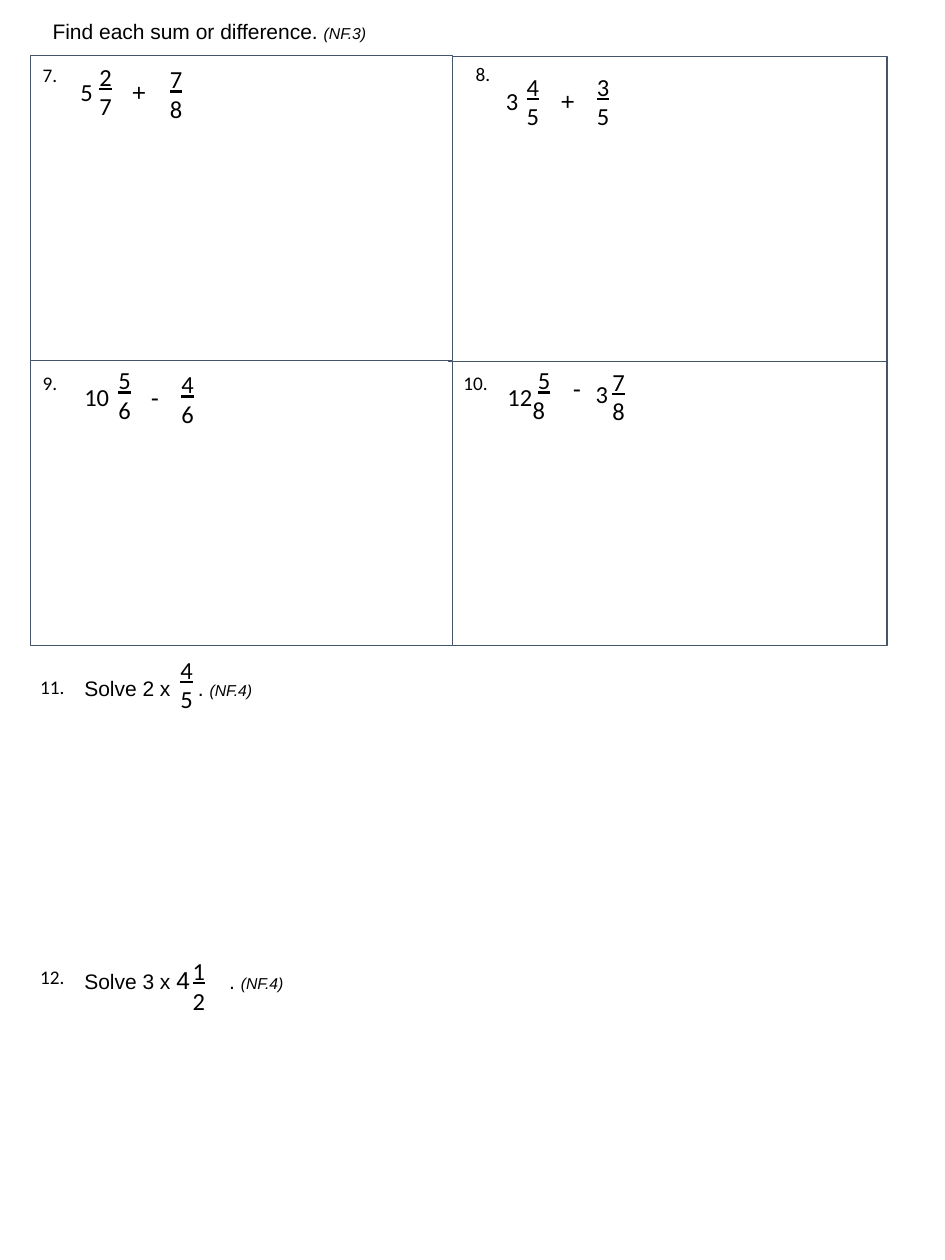
from pptx import Presentation
from pptx.dml.color import RGBColor
from pptx.enum.shapes import MSO_SHAPE as Shape
from pptx.enum.text import PP_ALIGN as Align
from pptx.oxml.ns import qn
from pptx.util import Cm, Pt
from lxml.etree import SubElement

BLACK, WHITE, BORDER = "000000", "FFFFFF", "44546A"
TEXT_FONT, NUMBER_FONT = "Arial", "Calibri"

# Grid cells: left, top, width, height in cm
CELLS = {
    "7.": (0.61, 1.12, 8.51, 6.15),
    "8.": (9.04, 1.14, 8.84, 6.15),
    "9.": (0.61, 6.86, 8.51, 6.15),
    "10.": (9.04, 6.86, 8.84, 6.15),
}

# Parts of each problem, with offsets in cm from the corner of its cell
PROBLEMS = {
    "7.": {"number": (0, 0.03), "wholes": [("5", 0.76, 0.3)],
           "operator": ("+", 1.8, 0.3, 1.6),
           "fractions": [("2", "7", 0.76, 0), ("7", "8", 2.18, 0.05)]},
    "8.": {"number": (0.3, 0), "wholes": [("3", 0.91, 0.46)],
           "operator": ("+", 2.01, 0.46, 1.14),
           "fractions": [("4", "5", 0.94, 0.18), ("3", "5", 2.36, 0.18)]},
    "9.": {"number": (0, 0.51), "wholes": [("10", 0.84, 0.71)],
           "operator": ("-", 2.18, 0.71, 0.86),
           "fractions": [("5", "6", 1.14, 0.38), ("4", "6", 2.41, 0.46)]},
    "10.": {"number": (0.05, 0.51),
            "wholes": [("12", 0.94, 0.71), ("3", 2.72, 0.66)],
            "operator": ("-", 2.26, 0.53, 0.89),
            "fractions": [("5", "8", 1.17, 0.38, 0.28), ("7", "8", 2.67, 0.41)]},
}


def color(hex_string):
    return RGBColor.from_string(hex_string)


def add_run(paragraph, text, size, font=TEXT_FONT, italic=False, underline=False):
    run = paragraph.add_run()
    run.text = text
    run.font.size = Pt(size)
    run.font.name = font
    run.font.italic = italic
    run.font.underline = underline
    run.font.color.rgb = color(BLACK)


def add_text(slide, box, runs):
    """Place a text box and return its first paragraph."""
    frame = slide.shapes.add_textbox(*map(Cm, box)).text_frame
    frame.word_wrap = True
    for run in runs:
        add_run(frame.paragraphs[0], *run)
    return frame.paragraphs[0]


def add_fraction(slide, left, top, numerator, denominator, indent=None):
    """Stack two numbers; an indent sets the lower one off centre."""
    frame = slide.shapes.add_textbox(Cm(left), Cm(top), Cm(1.52), Cm(1.45)).text_frame
    frame.word_wrap = True
    upper, lower = frame.paragraphs[0], frame.add_paragraph()
    upper.alignment = lower.alignment = Align.CENTER
    add_run(upper, numerator, 14, NUMBER_FONT, underline=True)
    add_run(lower, denominator, 14, NUMBER_FONT)
    if indent:
        lower.alignment = Align.LEFT
        lower._p.get_or_add_pPr().set("marL", str(Cm(indent)))


def add_cell(slide, box):
    cell = slide.shapes.add_shape(Shape.RECTANGLE, *map(Cm, box))
    cell.shadow.inherit = False
    cell.fill.solid()
    cell.fill.fore_color.rgb = color(WHITE)
    cell.line.color.rgb = color(BORDER)
    cell.line.width = Pt(0.75)


def add_grid_problem(slide, box, label, number, wholes, operator, fractions):
    left, top = box[:2]
    x, y = number
    add_text(slide, (left + x, top + y, 1.12, 0.74), [(label, 11, NUMBER_FONT)])
    for text, x, y in wholes:
        add_text(slide, (left + x, top + y, 1.04, 0.86), [(text, 14, NUMBER_FONT)])
    sign, x, y, width = operator
    add_text(slide, (left + x, top + y, width, 0.86), [(sign, 14)])
    for numerator, denominator, x, y, *indent in fractions:
        add_fraction(slide, left + x, top + y, numerator, denominator, *indent)


def add_solve_problem(slide, left, top, label, start, tab, fraction):
    """A numbered sentence whose tab leaves room for the fraction."""
    add_text(slide, (left, top, 1.22, 0.74), [(label, 11, NUMBER_FONT)])
    sentence = add_text(slide, (left + 0.89, top, 17.5, 1.32),
                        start + [("\t. ", 12), ("(NF.4)", 9, TEXT_FONT, True)])
    tab_list = SubElement(sentence._p.get_or_add_pPr(), qn("a:tabLst"))
    SubElement(tab_list, qn("a:tab"), pos=str(Cm(tab)), algn="l")
    numerator, denominator, x, y = fraction
    add_fraction(slide, left + x, top + y, numerator, denominator)


def main():
    presentation = Presentation()
    presentation.slide_width, presentation.slide_height = Cm(19.05), Cm(25.4)
    slide = presentation.slides.add_slide(presentation.slide_layouts[6])

    # Grid, bottom row first so that the top row overlaps it
    for box in reversed(list(CELLS.values())):
        add_cell(slide, box)

    # Heading
    add_text(slide, (0.81, 0.25, 9.91, 0.74),
             [("Find each sum or difference.", 12), (" ", 11),
              ("(NF.3)", 9, TEXT_FONT, True)])

    # Sums and differences
    for label, parts in PROBLEMS.items():
        add_grid_problem(slide, CELLS[label], label, **parts)

    # Products
    add_solve_problem(slide, 0.56, 13.49, "11.", [("Solve 2 x", 12)],
                      2.29, ("4", "5", 2.44, -0.41))
    add_solve_problem(slide, 0.56, 19.33, "12.", [("Solve 3 x ", 12), ("4", 14)],
                      2.92, ("1", "2", 2.69, -0.18))

    presentation.save("out.pptx")


if __name__ == "__main__":
    main()
